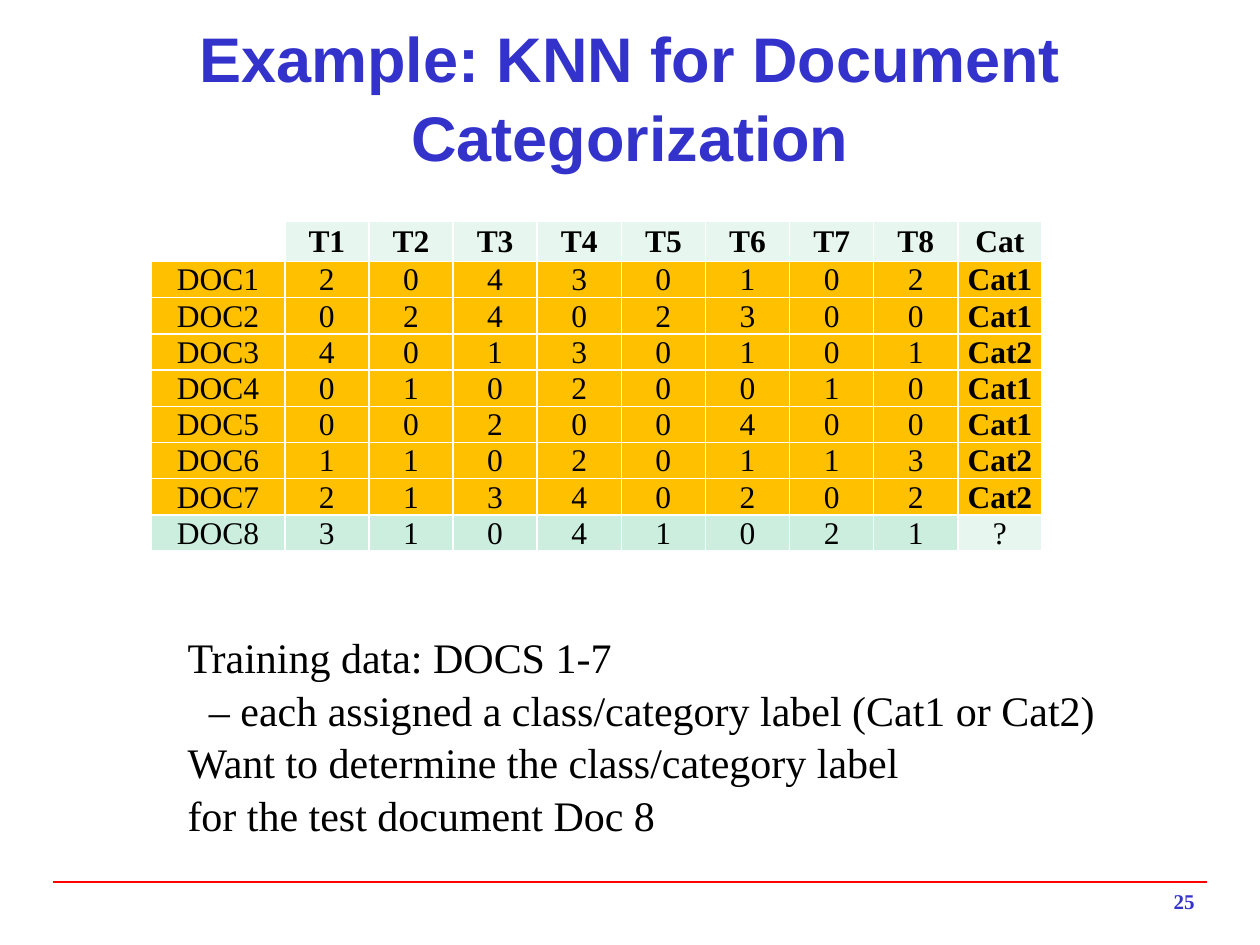
from dataclasses import dataclass

from lxml.etree import SubElement
from pptx import Presentation
from pptx.dml.color import RGBColor
from pptx.enum.shapes import MSO_CONNECTOR
from pptx.enum.text import MSO_ANCHOR, MSO_AUTO_SIZE, PP_ALIGN
from pptx.oxml.ns import qn
from pptx.util import Inches, Pt


@dataclass(frozen=True)
class Theme:
    heading_font: str = "Arial"
    body_font: str = "Times New Roman"
    accent: str = "3333CC"
    ink: str = "000000"
    rule: str = "FF0000"
    white: str = "FFFFFF"
    header: str = "E7F6EF"
    training: str = "FFC000"
    test: str = "CCEEDF"
    title_size: int = 36
    body_size: int = 24
    table_size: int = 18
    number_size: int = 12


THEME = Theme()
WIDTH, HEIGHT = 10, 7.5
HEADINGS = ["", *(f"T{term}" for term in range(1, 9)), "Cat"]
COUNTS = ["20430102", "02402300", "40130101", "01020010",
          "00200400", "11020113", "21340202", "31041021"]
CATEGORIES = ["Cat1", "Cat1", "Cat2", "Cat1", "Cat1", "Cat2", "Cat2", "?"]
EXPLANATION = [
    ("Training data: DOCS 1-7", 0),
    ("– each assigned a class/category label (Cat1 or Cat2)", 0.17),
    ("Want to determine the class/category label", 0),
    ("for the test document Doc 8", 0),
]


def color(value):
    return RGBColor.from_string(value)


def write(paragraph, text, *, size, font=THEME.body_font, ink=THEME.ink,
          bold=False, align=PP_ALIGN.LEFT, spacing=None, indent=0):
    paragraph.alignment = align
    paragraph.line_spacing = spacing
    if indent:
        paragraph._p.get_or_add_pPr().set("marL", str(Inches(indent)))
    run = paragraph.add_run()
    run.text = text
    run.font.name = font
    run.font.size = Pt(size)
    run.font.bold = bold
    run.font.color.rgb = color(ink)


def add_title(slide, box):
    title = slide.shapes.title
    title.left, title.top, title.width, title.height = map(Inches, box)
    frame = title.text_frame
    frame.word_wrap = True
    frame.auto_size = MSO_AUTO_SIZE.NONE
    frame.vertical_anchor = MSO_ANCHOR.MIDDLE
    write(frame.paragraphs[0], "Example: KNN for Document Categorization",
          size=THEME.title_size, font=THEME.heading_font, ink=THEME.accent,
          bold=True, align=PP_ALIGN.CENTER, spacing=1.05)


def add_borders(cell):
    """Put white lines before the fill, as the schema orders them."""
    properties = cell._tc.get_or_add_tcPr()
    for position, side in enumerate(("lnL", "lnR", "lnT", "lnB")):
        line = SubElement(properties, qn(f"a:{side}"), w=str(Pt(1)))
        fill = SubElement(line, qn("a:solidFill"))
        SubElement(fill, qn("a:srgbClr"), val=THEME.white)
        properties.insert(position, line)


def cell_fill(row, column, last_row, last_column):
    if row == 0:
        return THEME.header if column else THEME.white
    if row < last_row:
        return THEME.training
    return THEME.header if column == last_column else THEME.test


def add_document_table(slide, box):
    rows = [HEADINGS]
    for number, (counts, category) in enumerate(zip(COUNTS, CATEGORIES), 1):
        rows.append([f"DOC{number}", *counts, category])
    last_row, last_column = len(rows) - 1, len(HEADINGS) - 1
    left, top, width, height = box
    table = slide.shapes.add_table(len(rows), len(HEADINGS),
                                   *map(Inches, box)).table
    table.first_row = table.horz_banding = False

    label_width = 0.15 * width
    for index, column in enumerate(table.columns):
        share = (width - label_width) / last_column if index else label_width
        column.width = Inches(share)
    for row in table.rows:
        row.height = Inches(height / len(rows))

    for row, values in enumerate(rows):
        for column, value in enumerate(values):
            cell = table.cell(row, column)
            cell.margin_left = cell.margin_right = Inches(0.01)
            cell.margin_top, cell.margin_bottom = Inches(0.01), 0
            cell.vertical_anchor = MSO_ANCHOR.MIDDLE
            cell.fill.solid()
            cell.fill.fore_color.rgb = color(
                cell_fill(row, column, last_row, last_column))
            add_borders(cell)
            if value:
                write(cell.text_frame.paragraphs[0], value,
                      size=THEME.table_size, align=PP_ALIGN.CENTER,
                      bold=row == 0 or value.startswith("Cat"))


def add_explanation(slide, box):
    frame = slide.shapes.add_textbox(*map(Inches, box)).text_frame
    frame.word_wrap = True
    for index, (text, indent) in enumerate(EXPLANATION):
        paragraph = frame.add_paragraph() if index else frame.paragraphs[0]
        write(paragraph, text, size=THEME.body_size, spacing=1.04,
              indent=indent)


def add_footer(slide, box):
    left, top, width, height = box
    rule = slide.shapes.add_connector(
        MSO_CONNECTOR.STRAIGHT, Inches(left), Inches(top),
        Inches(left + width), Inches(top))
    rule.line.color.rgb = color(THEME.rule)
    rule.line.width = Pt(1)
    SubElement(rule._element.spPr, qn("a:effectLst"))

    number_width = 2.08
    number = slide.shapes.add_textbox(
        Inches(left + width - number_width), Inches(top),
        Inches(number_width), Inches(height))
    number.text_frame.word_wrap = True
    write(number.text_frame.paragraphs[0], "25", size=THEME.number_size,
          ink=THEME.accent, bold=True, align=PP_ALIGN.RIGHT)


def main():
    presentation = Presentation()
    presentation.slide_width = Inches(WIDTH)
    presentation.slide_height = Inches(HEIGHT)
    slide = presentation.slides.add_slide(presentation.slide_layouts[5])
    margin = 0.05 * WIDTH
    add_title(slide, (margin, 0.42, WIDTH - 2 * margin, 0.67))
    add_document_table(slide, (0.12 * WIDTH, 1.76, 7.07, 2.59))
    add_explanation(slide, (1.39, 0.66 * HEIGHT, 7.46, 1.72))
    add_footer(slide, (0.42, 7, WIDTH - 2 * 0.42, 0.33))
    presentation.save("out.pptx")


if __name__ == "__main__":
    main()
